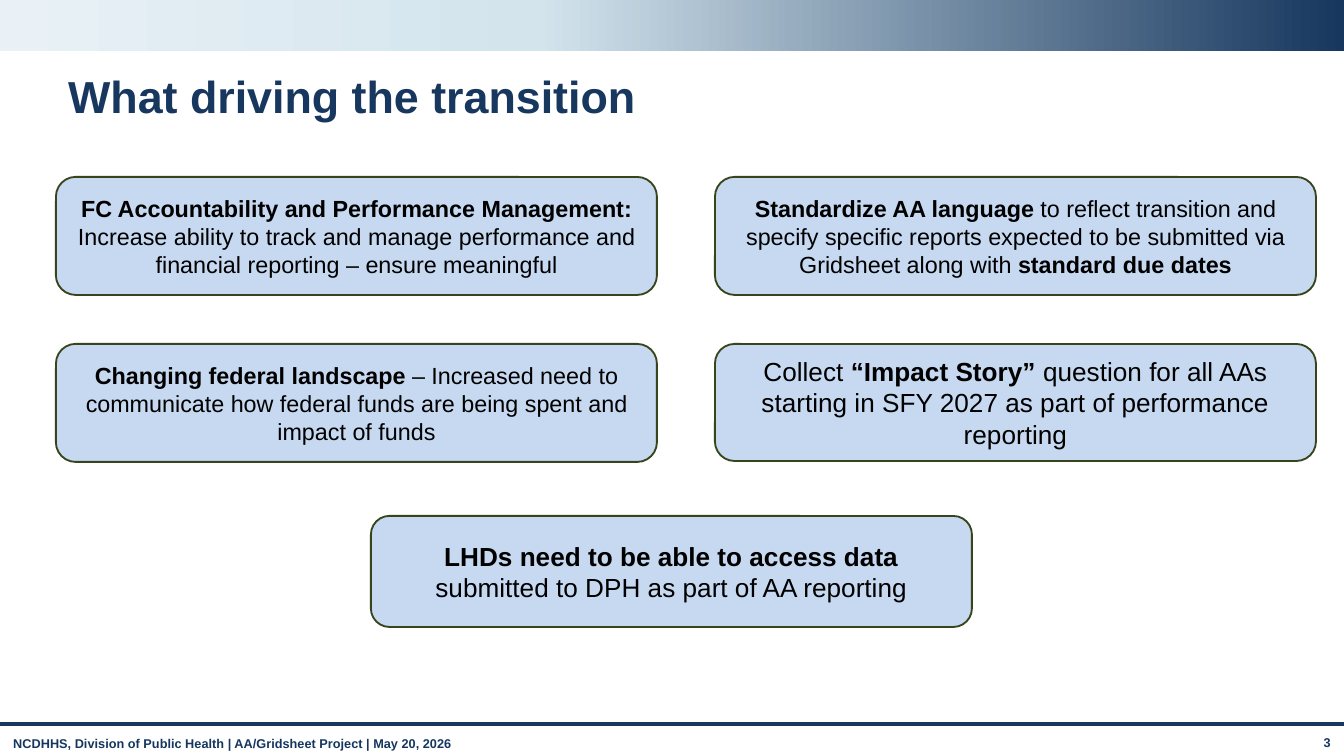
import copy

import pptx
import pptx.dml.color
import pptx.enum.dml
import pptx.enum.shapes
import pptx.enum.text
import pptx.oxml.ns
import pptx.oxml.xmlchemy
import pptx.util

COLORS = {
    "navy": "17375E",
    "footer": "15365E",
    "sky": "D3E4ED",
    "mist": "E9F1F6",
    "card": "C6D9F1",
    "border": "38451C",
    "text": "000000",
}
ALIGN = pptx.enum.text.PP_ALIGN
SHAPE = pptx.enum.shapes.MSO_SHAPE


def px(length):
    return pptx.util.Emu(round(length * 914400 / 134.4))


def color(name):
    return pptx.dml.color.RGBColor.from_string(COLORS[name])


class Deck:
    font = "Arial"

    def __init__(self, width, height):
        self.presentation = pptx.Presentation()
        self.presentation.slide_width = px(width)
        self.presentation.slide_height = px(height)
        self.slide = self.presentation.slides.add_slide(self.presentation.slide_layouts[6])

    def fill_text(self, frame, parts, size, ink, align):
        frame.word_wrap = True
        frame.vertical_anchor = pptx.enum.text.MSO_ANCHOR.MIDDLE
        paragraph = frame.paragraphs[0]
        paragraph.alignment = align
        for words, bold in parts:
            run = paragraph.add_run()
            run.text = words
            run.font.name = self.font
            run.font.size = pptx.util.Pt(size)
            run.font.bold = bold
            run.font.color.rgb = color(ink)
        return paragraph

    def label(self, box, words, size, ink, align=ALIGN.LEFT):
        frame = self.slide.shapes.add_textbox(*map(px, box)).text_frame
        return self.fill_text(frame, [(words, True)], size, ink, align)

    def gradient_band(self, box, stops):
        band = self.slide.shapes.add_shape(SHAPE.RECTANGLE, *map(px, box))
        band.shadow.inherit = False
        band.line.fill.background()
        band.fill.gradient()
        band.fill.gradient_angle = 180
        stop_list = band.element.find(".//" + pptx.oxml.ns.qn("a:gsLst"))
        stop_list.append(copy.deepcopy(stop_list[-1]))
        for stop, (position, name) in zip(band.fill.gradient_stops, stops):
            stop.position = position
            stop.color.rgb = color(name)

    def rule(self, start, end, ink, weight):
        line = self.slide.shapes.add_connector(
            pptx.enum.shapes.MSO_CONNECTOR.STRAIGHT, *map(px, start + end))
        line.line.color.rgb = color(ink)
        line.line.width = pptx.util.Pt(weight)
        line.element.spPr.append(pptx.oxml.xmlchemy.OxmlElement("a:effectLst"))

    def card(self, box, parts, size):
        card = self.slide.shapes.add_shape(SHAPE.ROUNDED_RECTANGLE, *map(px, box))
        card.shadow.inherit = False
        card.fill.solid()
        card.fill.fore_color.rgb = color("card")
        card.line.color.rgb = color("border")
        card.line.width = pptx.util.Pt(1)
        self.fill_text(card.text_frame, parts, size, "text", ALIGN.CENTER)


def main():
    width, height = 1344, 756
    deck = Deck(width, height)

    deck.gradient_band((0, 0, width, 51), [(0, "navy"), (0.6, "sky"), (1, "mist")])
    deck.rule((0, 724), (width, 724), "navy", 1.75)
    deck.label((0, 728, 1175, 30),
               "NCDHHS, Division of Public Health | AA/Gridsheet Project | May 20, 2026",
               6.8, "footer")
    deck.label((1285, 727, 59, 30), "3", 6.8, "footer", ALIGN.RIGHT)
    title = deck.label((55, 69, 1153, 60), "What driving the transition", 24, "navy")
    title.line_spacing = 0.9

    card_width = 601
    left, right, center = 56, 715, (width - card_width) // 2
    top, middle, bottom = 177, 344, 516
    reasons = [
        (left, top, 118, 12.5, [
            ("FC Accountability and Performance Management: ", True),
            ("Increase ability to track and manage performance and financial "
             "reporting – ensure meaningful", False)]),
        (right, top, 118, 12.5, [
            ("Standardize AA language ", True),
            ("to reflect transition and specify specific reports expected to be "
             "submitted via Gridsheet along with ", False),
            ("standard due dates", True)]),
        (left, middle, 118, 12.5, [
            ("Changing federal landscape ", True),
            ("– Increased need to communicate how federal funds are being spent "
             "and impact of funds", False)]),
        (right, middle, 117, 14, [
            ("Collect ", False),
            ("“Impact Story” ", True),
            ("question for all AAs starting in SFY 2027 as part of performance "
             "reporting", False)]),
        (center, bottom, 111, 14, [
            ("LHDs need to be able to access data", True),
            (" submitted to DPH as part of AA reporting", False)]),
    ]
    for x, y, card_height, size, parts in reasons:
        deck.card((x, y, card_width, card_height), parts, size)

    deck.presentation.save("out.pptx")


if __name__ == "__main__":
    main()
